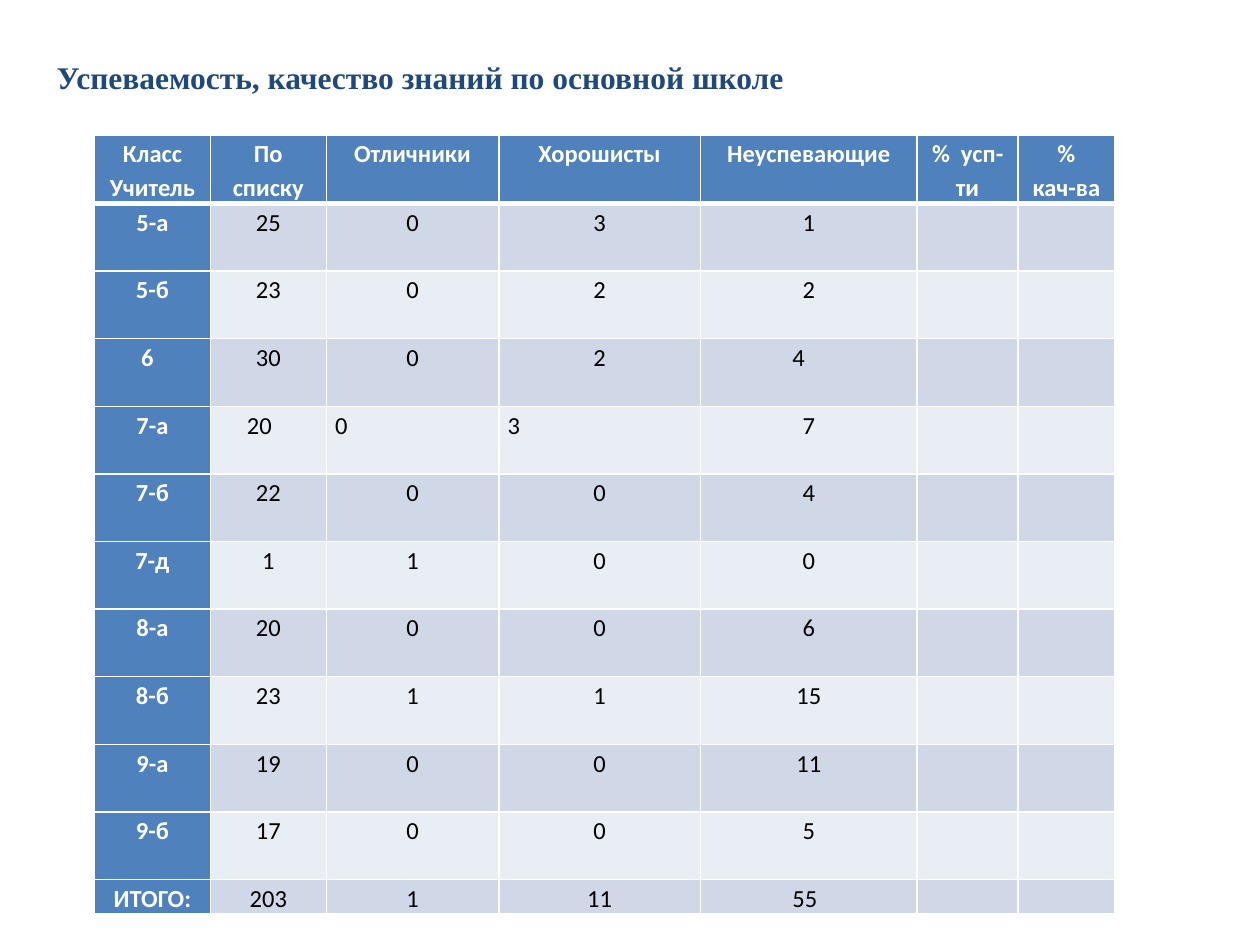
from lxml import etree
from pptx import Presentation
from pptx import util as u
from pptx.dml.color import RGBColor
from pptx.enum import text
from pptx.oxml.ns import qn

NAVY = RGBColor(0x1F, 0x49, 0x7D)
BLUE = RGBColor(0x4F, 0x81, 0xBD)
WHITE = RGBColor(0xFF, 0xFF, 0xFF)
BLACK = RGBColor(0, 0, 0)
BANDS = [RGBColor(0xE9, 0xED, 0xF4), RGBColor(0xD0, 0xD8, 0xE8)]

COLUMNS = [0.92, 0.92, 1.37, 1.6, 1.72, 0.8, 0.77]
ROWS = [0.53] + [0.537] * 10 + [0.27]
RESULTS = [
    ["Класс\nУчитель", "По списку", "Отличники", "Хорошисты",
     "Неуспевающие", "%  усп-ти", "%\nкач-ва"],
    ["5-а", "25", "0", "3", "1"],
    ["5-б", "23", "0", "2", "2"],
    ["6", "30", "0", "2", "4"],
    ["7-а", "20", "0", "3", "7"],
    ["7-б", "22", "0", "0", "4"],
    ["7-д", "1", "1", "0", "0"],
    ["8-а", "20", "0", "0", "6"],
    ["8-б", "23", "1", "1", "15"],
    ["9-а", "19", "0", "0", "11"],
    ["9-б", "17", "0", "0", "5"],
    ["ИТОГО:", "203", "1", "11", "55"],
]
# Left-aligned cells: (row, column) -> indent in inches
INDENTS = {(3, 0): 0.3, (3, 4): 0.66, (4, 1): 0.22,
           (4, 2): 0, (4, 3): 0, (11, 4): 0.66}


def set_borders(cell, bottom_width):
    """Draw white lines on all four sides, ahead of the cell's fill."""
    properties = cell._tc.get_or_add_tcPr()
    for place, side in enumerate(["lnL", "lnR", "lnT", "lnB"]):
        width = bottom_width if side == "lnB" else 1
        line = etree.Element(qn(f"a:{side}"), w=str(u.Pt(width)))
        fill = etree.SubElement(line, qn("a:solidFill"))
        etree.SubElement(fill, qn("a:srgbClr"), val=str(WHITE))
        properties.insert(place, line)


deck = Presentation()
deck.slide_width, deck.slide_height = u.Inches(10), u.Inches(7.5)
slide = deck.slides.add_slide(deck.slide_layouts[5])

# Title
title = slide.shapes.title
title.left, title.top = u.Inches(0.35), u.Inches(0.41)
title.width, title.height = u.Inches(6.03), u.Inches(0.4)
title.text_frame.text = "Успеваемость, качество знаний по основной школе"
title.text_frame.word_wrap = False
title.text_frame.auto_size = text.MSO_AUTO_SIZE.NONE
title.text_frame.vertical_anchor = text.MSO_ANCHOR.MIDDLE
heading = title.text_frame.paragraphs[0]
heading.alignment = text.PP_ALIGN.LEFT
heading.font.name, heading.font.size = "Times New Roman", u.Pt(18)
heading.font.bold, heading.font.color.rgb = True, NAVY

# Table grid
results = slide.shapes.add_table(
    len(ROWS), len(COLUMNS), u.Inches(0.75), u.Inches(1.07),
    u.Inches(sum(COLUMNS)), u.Inches(sum(ROWS))).table
results.first_col = True
for column, width in zip(results.columns, COLUMNS):
    column.width = u.Inches(width)
for row, height in zip(results.rows, ROWS):
    row.height = u.Inches(height)

# Cells: blue header row and class column, banded figures
for r, values in enumerate(RESULTS):
    for c in range(len(COLUMNS)):
        cell = results.cell(r, c)
        is_header = r == 0 or c == 0
        cell.text = values[c] if c < len(values) else ""
        cell.margin_left = cell.margin_right = u.Inches(0.07)
        cell.margin_top = cell.margin_bottom = 0
        cell.fill.solid()
        cell.fill.fore_color.rgb = BLUE if is_header else BANDS[r % 2]
        set_borders(cell, 3 if r == 0 else 1)
        for paragraph in cell.text_frame.paragraphs:
            paragraph.line_spacing = 1.15
            paragraph.alignment = text.PP_ALIGN.CENTER
            paragraph.font.name, paragraph.font.size = "Calibri", u.Pt(14)
            paragraph.font.bold = is_header
            paragraph.font.color.rgb = WHITE if is_header else BLACK
            if (r, c) in INDENTS:
                paragraph.alignment = text.PP_ALIGN.LEFT
                paragraph._p.get_or_add_pPr().set(
                    "marL", str(u.Inches(INDENTS[r, c])))

deck.save("out.pptx")
